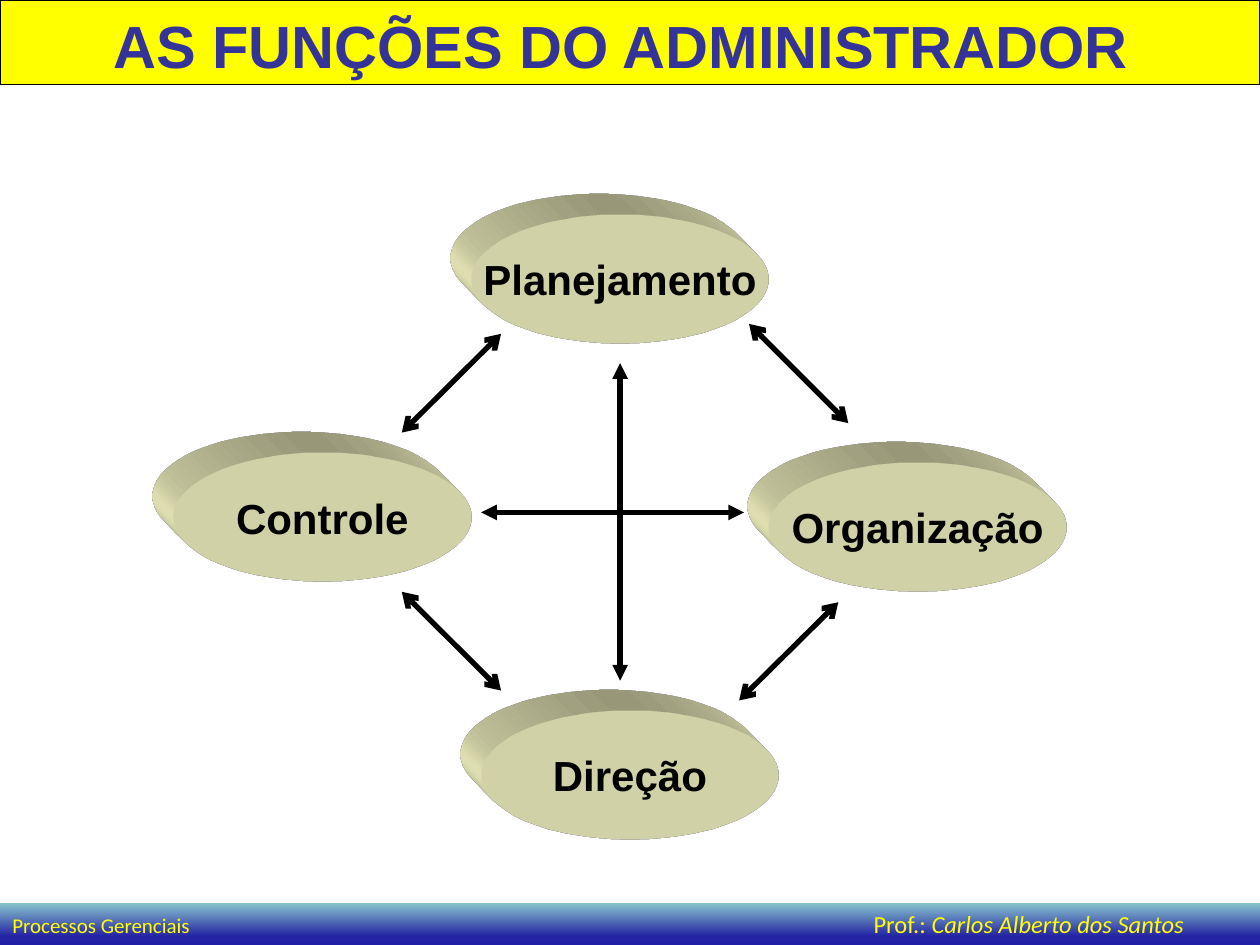
"""Build the slide on the four functions of the administrator."""
from lxml.etree import SubElement
from pptx import Presentation
from pptx.dml.color import RGBColor
from pptx.enum.shapes import MSO_CONNECTOR as LINK, MSO_SHAPE as SHAPE
from pptx.enum.text import MSO_ANCHOR as ANCHOR, MSO_AUTO_SIZE as AUTOSIZE, PP_ALIGN as ALIGN
from pptx.oxml.ns import qn
from pptx.util import Cm, Pt

BLACK = RGBColor(0x00, 0x00, 0x00)
YELLOW = RGBColor(0xFF, 0xFF, 0x00)
INDIGO = RGBColor(0x33, 0x33, 0x99)
CREAM = RGBColor(0xFF, 0xFF, 0xCC)
FOOTER_STOPS = [(0, "8AC6CD"), (80, "2323A3"), (100, "2020A6")]

PAGE_WIDTH, PAGE_HEIGHT = 25.4, 19.05
TITLE = "AS FUNÇÕES DO ADMINISTRADOR"
TITLE_HEIGHT = 1.7
FOOTER = [("Processos Gerenciais", 12, False), ("\t", 12, False),
          ("Prof.: ", 14, False), ("Carlos Alberto dos Santos", 14, True)]
FOOTER_HEIGHT, FOOTER_TAB = 0.85, 17.36

DISC_WIDTH, DISC_HEIGHT, DEPTH = 6, 2.6, 1.2
FUNCTIONS = [("Direção", 9.7, 14.32), ("Planejamento", 9.5, 4.32),
             ("Controle", 3.5, 9.13), ("Organização", 15.5, 9.32)]
ARROWS = [("triangle", 12.5, 7.32, 12.5, 13.72), ("triangle", 15, 10.33, 9.7, 10.33),
          ("arrow", 15.1, 6.53, 17.1, 8.53), ("arrow", 14.9, 14.12, 16.9, 12.14),
          ("arrow", 8.1, 11.93, 10.1, 13.92), ("arrow", 8.1, 8.72, 10.1, 6.73)]


def add_span(para, text, size, color, font="Arial", bold=False, italic=False):
    span = para.add_run()
    span.text = text
    span.font.name, span.font.size = font, Pt(size)
    span.font.bold, span.font.italic = bold, italic
    span.font.color.rgb = color


def fill_gradient(shape, stops, angle):
    shape.fill.gradient()
    shape.fill.gradient_angle = angle
    stop_list = shape._element.spPr.find(qn("a:gradFill")).find(qn("a:gsLst"))
    for stop in list(stop_list):
        stop_list.remove(stop)
    for percent, color in stops:
        stop = SubElement(stop_list, qn("a:gs"), pos=str(percent * 1000))
        SubElement(stop, qn("a:srgbClr"), val=color)


def extrude(shape):
    properties = shape._element.spPr
    scene = SubElement(properties, qn("a:scene3d"))
    SubElement(scene, qn("a:camera"), prst="legacyObliqueTopLeft")
    SubElement(scene, qn("a:lightRig"), rig="legacyFlat3", dir="b")
    solid = SubElement(properties, qn("a:sp3d"), extrusionH=str(Cm(DEPTH)),
                       prstMaterial="legacyMatte")
    for bevel in ("a:bevelT", "a:bevelB"):
        SubElement(solid, qn(bevel), w="13500", h="13500", prst="angle")
    color = SubElement(solid, qn("a:extrusionClr"))
    SubElement(color, qn("a:srgbClr"), val=str(CREAM))


def add_disc(page, label, left, top):
    disc = page.shapes.add_shape(SHAPE.OVAL, Cm(left), Cm(top), Cm(DISC_WIDTH), Cm(DISC_HEIGHT))
    disc.fill.solid()
    disc.fill.fore_color.rgb = CREAM
    disc.line.fill.background()
    disc.shadow.inherit = False
    extrude(disc)
    frame = disc.text_frame
    frame.word_wrap = False
    frame.vertical_anchor = ANCHOR.MIDDLE
    para = frame.paragraphs[0]
    para.alignment = ALIGN.CENTER
    add_span(para, label, 24, BLACK, bold=True)


def add_arrow(page, tip, *ends):
    arrow = page.shapes.add_connector(LINK.STRAIGHT, *map(Cm, ends))
    arrow.line.color.rgb = BLACK
    arrow.line.width = Pt(3)
    outline = arrow.line._get_or_add_ln()
    for end in ("a:headEnd", "a:tailEnd"):
        SubElement(outline, qn(end), type=tip)
    SubElement(arrow._element.spPr, qn("a:effectLst"))


def format_title(page):
    title = page.shapes.title
    title.left, title.top, title.width, title.height = 0, 0, Cm(PAGE_WIDTH), Cm(TITLE_HEIGHT)
    title.fill.solid()
    title.fill.fore_color.rgb = YELLOW
    title.line.color.rgb = BLACK
    title.line.width = Pt(0.75)
    frame = title.text_frame
    frame.auto_size = AUTOSIZE.NONE
    frame.vertical_anchor = ANCHOR.TOP
    frame.margin_left, frame.margin_right = Cm(0.2), Cm(0.56)
    frame.margin_top, frame.margin_bottom = Cm(0.18), 0
    para = frame.paragraphs[0]
    para.alignment = ALIGN.CENTER
    add_span(para, TITLE, 34, INDIGO, bold=True)


def add_footer(page):
    footer = page.shapes.add_shape(SHAPE.RECTANGLE, 0, Cm(PAGE_HEIGHT - FOOTER_HEIGHT),
                                   Cm(PAGE_WIDTH), Cm(FOOTER_HEIGHT))
    footer.shadow.inherit = False
    footer.line.fill.background()
    fill_gradient(footer, FOOTER_STOPS, 270)
    frame = footer.text_frame
    frame.word_wrap = True
    frame.vertical_anchor = ANCHOR.MIDDLE
    para = frame.paragraphs[0]
    para.alignment = ALIGN.LEFT
    tabs = SubElement(para._p.get_or_add_pPr(), qn("a:tabLst"))
    SubElement(tabs, qn("a:tab"), pos=str(Cm(FOOTER_TAB)), algn="l")
    for text, size, italic in FOOTER:
        add_span(para, text, size, YELLOW, "Calibri", italic=italic)


def main():
    deck = Presentation()
    deck.slide_width, deck.slide_height = Cm(PAGE_WIDTH), Cm(PAGE_HEIGHT)
    page = deck.slides.add_slide(deck.slide_layouts[5])
    format_title(page)
    for function in FUNCTIONS:
        add_disc(page, *function)
    for arrow in ARROWS:
        add_arrow(page, *arrow)
    add_footer(page)
    deck.save("out.pptx")


if __name__ == "__main__":
    main()
